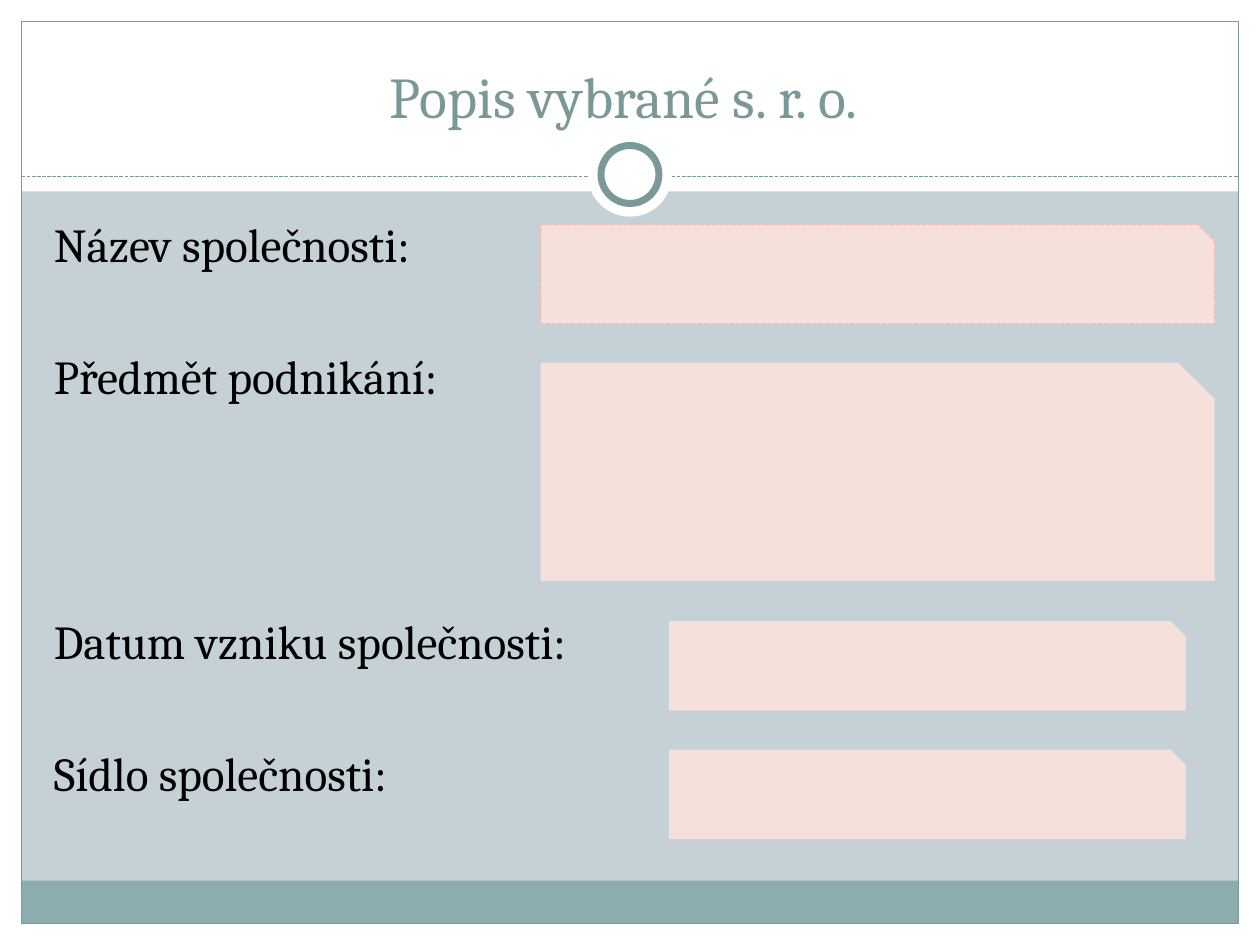
import pptx
import pptx.util
import pptx.dml.color
import pptx.enum.dml
import pptx.enum.shapes
import pptx.enum.text
import pptx.oxml.ns
from lxml import etree

Inches = pptx.util.Inches
Shape = pptx.enum.shapes.MSO_SHAPE
FONT = "Cambria"
WHITE = "FFFFFF"
FRAME = "7C999A"
FIELD = "F6E0DB"


def color(value):
    return pptx.dml.color.RGBColor.from_string(value)


def set_line(line, value, width, dashed=False):
    line.color.rgb = color(value)
    line.width = pptx.util.Pt(width)
    if dashed:
        line.dash_style = pptx.enum.dml.MSO_LINE.SQUARE_DOT


def add_shape(page, kind, box, fill=None, line=None):
    shape = page.shapes.add_shape(kind, *map(Inches, box))
    shape.shadow.inherit = False
    if fill:
        shape.fill.solid()
        shape.fill.fore_color.rgb = color(fill)
    else:
        shape.fill.background()
    if line:
        set_line(shape.line, *line)
    else:
        shape.line.fill.background()
    return shape


def add_text(page, box, text, size, value, align, anchor):
    frame = page.shapes.add_textbox(*map(Inches, box)).text_frame
    frame.word_wrap = True
    frame.vertical_anchor = anchor
    para = frame.paragraphs[0]
    para.text = text
    para.alignment = align
    para.font.name = FONT
    para.font.size = pptx.util.Pt(size)
    para.font.color.rgb = color(value)


def add_frame(page, box, margin=0.17, header=1.52, footer=0.34):
    left, top, width, height = box
    right, bottom = left + width - margin, top + height - margin
    inner = width - 2 * margin
    for band in (
        (left, bottom, width, margin),
        (left, top, width, header),
        (left, top, margin, height),
        (right, top, margin, height),
    ):
        add_shape(page, Shape.RECTANGLE, band, WHITE)
    add_shape(page, Shape.RECTANGLE,
              (left + margin, bottom - footer, inner, footer), "8CADAE")
    add_shape(page, Shape.RECTANGLE,
              (left + margin, top + margin, inner, height - 2 * margin),
              line=(FRAME, 0.75))


def add_divider(page, box):
    left, top, width, height = box
    rule_y = Inches(top + 0.35)
    rule = page.shapes.add_connector(
        pptx.enum.shapes.MSO_CONNECTOR.STRAIGHT,
        Inches(left), rule_y, Inches(left + width), rule_y)
    set_line(rule.line, FRAME, 0.75, True)
    etree.SubElement(rule._element.spPr, pptx.oxml.ns.qn("a:effectLst"))
    for size, line in ((height, None), (0.46, (FRAME, 4))):
        ring = (left + (width - size) / 2, top + (height - size) / 2, size, size)
        add_shape(page, Shape.OVAL, ring, WHITE, line)


def add_title(page, box, text):
    add_text(page, box, text, 33, "7B9899",
             pptx.enum.text.PP_ALIGN.CENTER, pptx.enum.text.MSO_ANCHOR.BOTTOM)


def add_form(page, box, entries, pitch=0.525):
    left, top, width, height = box
    for label, row, field, line in entries:
        add_text(page, (left, top + row * pitch, 4.9, pitch), label, 27, "000000",
                 pptx.enum.text.PP_ALIGN.LEFT, pptx.enum.text.MSO_ANCHOR.TOP)
        x, y, field_width, field_height = field
        add_shape(page, Shape.SNIP_1_RECTANGLE,
                  (left + x, top + y, field_width, field_height), FIELD, line)


def main():
    deck = pptx.Presentation()
    deck.slide_width, deck.slide_height = Inches(10), Inches(7.5)
    page = deck.slides.add_slide(deck.slide_layouts[6])
    page.background.fill.solid()
    page.background.fill.fore_color.rgb = color("C5D1D7")

    add_frame(page, (0, 0, 10, 7.5))
    add_divider(page, (0.17, 1.05, 9.66, 0.67))
    add_title(page, (0.33, 0.25, 9.33, 0.83), "Popis vybrané s. r. o. ")
    add_form(page, (0.33, 1.66, 9.3, 5), (
        ("Název společnosti:", 0, (3.96, 0.12, 5.35, 0.79), ("EDC1B6", 0.9, True)),
        ("Předmět podnikání:", 2, (3.96, 1.22, 5.35, 1.73), None),
        ("Datum vzniku společnosti:", 6, (4.98, 3.27, 4.1, 0.71), None),
        ("Sídlo společnosti:", 8, (4.98, 4.29, 4.1, 0.71), None),
    ))
    deck.save("out.pptx")


if __name__ == "__main__":
    main()
